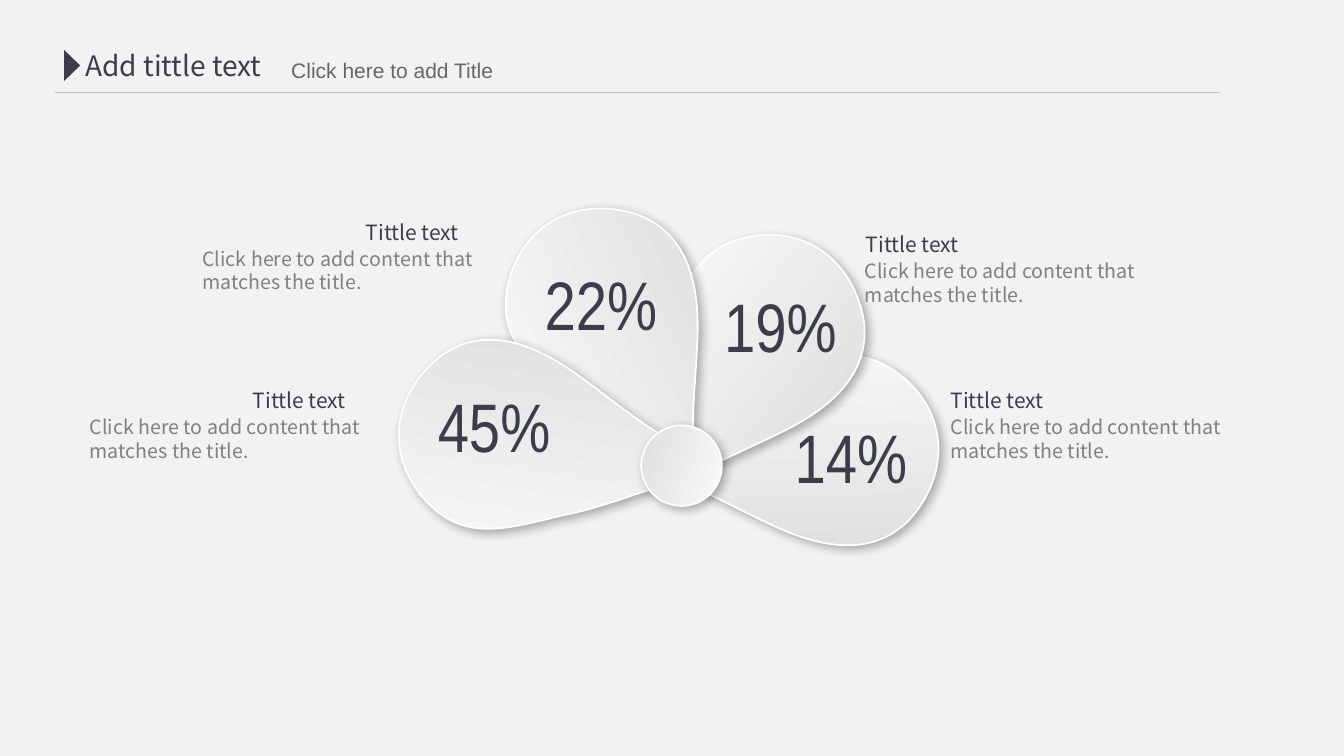
from lxml import etree
from pptx import Presentation
from pptx.dml.color import RGBColor
from pptx.enum.shapes import MSO_CONNECTOR, MSO_SHAPE
from pptx.enum.text import PP_ALIGN
from pptx.oxml import parse_xml
from pptx.oxml.ns import nsdecls, qn
from pptx.util import Inches, Pt

# Content
TITLE = "Add tittle text"
SUBTITLE = "Click here to add Title"
HEADING = "Tittle text"
BODY = "Click here to add content that matches the title."

# Petals, back to front: share, its text place, petal centre, rotation,
# heading place, body left
PETALS = [
    ("14%", (7.65, 4.06), (8.09, 4.46), 222.9, (9.33, 3.8), 9.33),
    ("19%", (6.95, 2.76), (7.45, 3.48), 171.5, (8.49, 2.25), 8.48),
    ("22%", (5.17, 2.54), (6.07, 3.26), 110.2, (3.53, 2.13), 1.91),
    ("45%", (4.11, 3.75), (5.18, 4.37), 53.5, (2.41, 3.8), 0.79),
]

# Petal outline around its centre: two tip corners, then Bezier curves
TIP = [(0.76, -1.14), (1.15, -0.76)]
CURVES = [
    ((1.05, -0.47), (0.97, -0.17), (0.82, 0.14)),
    ((0.59, 0.69), (0.44, 1.1), (-0.17, 1.13)),
    ((-0.77, 1.15), (-1.15, 0.7), (-1.16, 0.14)),
    ((-1.15, -0.4), (-0.69, -0.68), (-0.17, -0.84)),
    ((0.21, -0.96), (0.5, -1.03), (0.76, -1.14)),
]

THEME = {
    "back": "F2F2F2", "ink": "3A3E4A", "subtitle": "666666", "body": "808080",
    "rule": "BFBFBF", "dark": "D9D9D9", "light": "FFFFFF",
    "sans": "Noto Sans CJK SC", "plain": "Arial", "narrow": "Arial Narrow",
    "title_pt": 20, "heading_pt": 15, "body_pt": 14, "share_pt": 49,
}


def color(name):
    return RGBColor.from_string(THEME[name])


def add_text(text, x, y, w, h, size, font, ink, align=PP_ALIGN.LEFT, inset=(0.1, 0.05)):
    tf = s.shapes.add_textbox(Inches(x), Inches(y), Inches(w), Inches(h)).text_frame
    tf.word_wrap = True
    tf.margin_left = tf.margin_right = Inches(inset[0])
    tf.margin_top = tf.margin_bottom = Inches(inset[1])
    tf.text = text
    p = tf.paragraphs[0]
    p.alignment = align
    r = p.runs[0]
    r.font.size = Pt(THEME[size])
    r.font.name = THEME[font]
    r.font.color.rgb = color(ink)
    etree.SubElement(r.font._element, qn("a:ea")).set("typeface", THEME[font])


def raise_shape(sp, rotation):
    """Give a shape the soft gradient, light edge and drop shadow."""
    sp.rotation = rotation
    sp.fill.gradient()
    sp.fill.gradient_angle = 315
    for stop, name in zip(sp.fill.gradient_stops, ("dark", "light")):
        stop.color.rgb = color(name)
    sp.line.color.rgb = color("light")
    sp.line.width = Pt(1.25)
    sp._element.spPr.append(parse_xml(
        f'<a:effectLst {nsdecls("a")}><a:outerShdw blurRad="{Pt(7)}" dist="{Pt(3)}" '
        'dir="2700000" algn="tl" rotWithShape="0"><a:srgbClr val="000000">'
        '<a:alpha val="30000"/></a:srgbClr></a:outerShdw></a:effectLst>'))


def add_petal(cx, cy):
    """Lay out corners and handles as points, then join each three as a curve."""
    outline = TIP + [point for curve in CURVES for point in curve]
    points = [(Inches(cx + x), Inches(cy + y)) for x, y in outline]
    builder = s.shapes.build_freeform(*points[0])
    builder.add_line_segments(points[1:], close=True)
    sp = builder.convert_to_shape()
    lines = list(sp._element.iter(qn("a:lnTo")))[1:]
    for i in range(0, 3 * len(CURVES), 3):
        curve = etree.Element(qn("a:cubicBezTo"))
        lines[i].addprevious(curve)
        for line in lines[i:i + 3]:
            curve.append(line[0])
            line.getparent().remove(line)
    return sp


prs = Presentation()
prs.slide_width, prs.slide_height = Inches(13.33), Inches(7.5)
s = prs.slides.add_slide(prs.slide_layouts[6])
s.background.fill.solid()
s.background.fill.fore_color.rgb = color("back")

# Header
rule = s.shapes.add_connector(
    MSO_CONNECTOR.STRAIGHT, Inches(0.55), Inches(0.92), Inches(12.1), Inches(0.92))
rule.line.color.rgb = color("rule")
rule.line.width = Pt(0.75)
etree.SubElement(rule._element.spPr, qn("a:effectLst"))
add_text(TITLE, 0.75, 0.43, 2.14, 0.44, "title_pt", "sans", "ink")
marker = s.shapes.add_shape(
    MSO_SHAPE.ISOSCELES_TRIANGLE, Inches(0.56), Inches(0.57), Inches(0.31), Inches(0.16))
marker.rotation = 90
marker.shadow.inherit = False
marker.fill.solid()
marker.fill.fore_color.rgb = color("ink")
marker.line.fill.background()
add_text(SUBTITLE, 2.79, 0.52, 2.71, 0.35, "heading_pt", "plain", "subtitle")

# Petals
for _, _, centre, rotation, _, _ in PETALS:
    raise_shape(add_petal(*centre), rotation)

# Hub
hub = s.shapes.add_shape(
    MSO_SHAPE.OVAL, Inches(6.36), Inches(4.22), Inches(0.8), Inches(0.8))
raise_shape(hub, 334.2)

# Captions and shares
for share, (x, y), _, _, (head_x, head_y), body_x in PETALS:
    add_text(HEADING, head_x, head_y, 2.1, 0.35, "heading_pt", "sans", "ink")
    add_text(BODY, body_x, head_y + 0.27, 3.33, 0.57, "body_pt", "sans", "body")
    add_text(share, x, y, 1.58, 0.95, "share_pt", "narrow", "ink",
             PP_ALIGN.CENTER, (0.12, 0.06))

prs.save("out.pptx")
